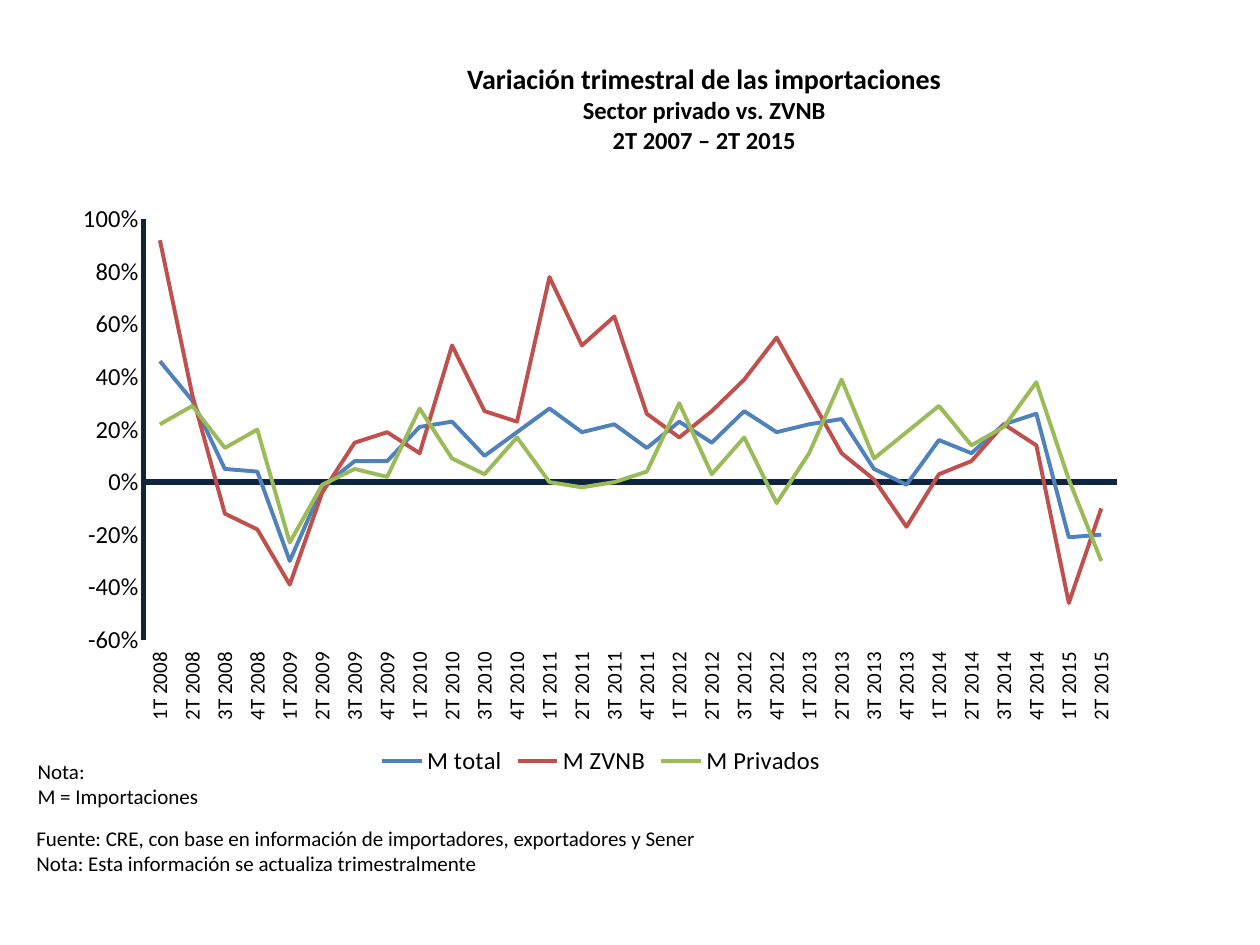
import pptx
import pptx.chart.data
import pptx.dml.color
import pptx.enum.chart
import pptx.enum.text
import pptx.oxml
import pptx.oxml.ns
import pptx.util

INK = pptx.dml.color.RGBColor(0x00, 0x00, 0x00)
NAVY = pptx.dml.color.RGBColor(0x0F, 0x24, 0x3E)
BLUE = pptx.dml.color.RGBColor(0x4F, 0x81, 0xBD)
RED = pptx.dml.color.RGBColor(0xC0, 0x50, 0x4D)
GREEN = pptx.dml.color.RGBColor(0x9B, 0xBB, 0x59)
FACE = "Calibri"
WIDE, HIGH = pptx.util.Inches(10), pptx.util.Inches(7.5)

QUARTERS = [f"{q}T {year}" for year in range(2008, 2016) for q in range(1, 5)][:30]
SERIES = [
    ("M total", BLUE, [
        0.46, 0.31, 0.05, 0.04, -0.3, -0.02, 0.08, 0.08, 0.21, 0.23,
        0.1, 0.19, 0.28, 0.19, 0.22, 0.13, 0.23, 0.15, 0.27, 0.19,
        0.22, 0.24, 0.05, -0.01, 0.16, 0.11, 0.22, 0.26, -0.21, -0.2]),
    ("M ZVNB", RED, [
        0.92, 0.33, -0.12, -0.18, -0.39, -0.04, 0.15, 0.19, 0.11, 0.52,
        0.27, 0.23, 0.78, 0.52, 0.63, 0.26, 0.17, 0.27, 0.39, 0.55,
        0.33, 0.11, 0.01, -0.17, 0.03, 0.08, 0.22, 0.14, -0.46, -0.1]),
    ("M Privados", GREEN, [
        0.22, 0.29, 0.13, 0.2, -0.23, -0.01, 0.05, 0.02, 0.28, 0.09,
        0.03, 0.17, 0, -0.02, 0, 0.04, 0.3, 0.03, 0.17, -0.08,
        0.11, 0.39, 0.09, 0.19, 0.29, 0.14, 0.21, 0.38, 0.01, -0.3]),
]


def share(left, top, width, height):
    """Turn percentages of the slide into a box."""
    return [int(part * side / 100) for part, side in
            zip((left, top, width, height), (WIDE, HIGH, WIDE, HIGH))]


def style(font, size, bold=False):
    """Set the face, size, weight and colour of a font."""
    font.name, font.size, font.bold = FACE, pptx.util.Pt(size), bold
    font.color.rgb = INK


def add_text(slide, box, lines, sizes, align=pptx.enum.text.PP_ALIGN.LEFT, bold=False):
    """Place a block of lines, one paragraph each, in the box."""
    frame = slide.shapes.add_textbox(*box).text_frame
    frame.word_wrap = True
    frame.auto_size = pptx.enum.text.MSO_AUTO_SIZE.SHAPE_TO_FIT_TEXT
    frame.text = "\n".join(lines)
    for para, size in zip(frame.paragraphs, sizes):
        para.alignment = align
        style(para.runs[0].font, size, bold)


def set_axis(axis, size, weight):
    """Give an axis its labels and line, without ticks or grid."""
    axis.has_major_gridlines = False
    axis.major_tick_mark = axis.minor_tick_mark = pptx.enum.chart.XL_TICK_MARK.NONE
    style(axis.tick_labels.font, size)
    axis.format.line.color.rgb = NAVY
    axis.format.line.width = pptx.util.Pt(weight)


def set_plot(chart, left, top, width, height):
    """Fix the inner plot area to percentages of the chart."""
    area = chart._chartSpace.chart.plotArea
    for old in area.findall(pptx.oxml.ns.qn("c:layout")):
        area.remove(old)
    parts = zip("xywh", (left, top, width, height))
    modes = '<c:layoutTarget val="inner"/><c:xMode val="edge"/><c:yMode val="edge"/>'
    sizes = "".join(f'<c:{name} val="{part / 100:.4f}"/>' for name, part in parts)
    area.insert(0, pptx.oxml.parse_xml(
        f'<c:layout {pptx.oxml.ns.nsdecls("c")}><c:manualLayout>'
        f'{modes}{sizes}</c:manualLayout></c:layout>'))


def add_lines(slide, box):
    """Place the line chart of quarterly changes in the box."""
    data = pptx.chart.data.CategoryChartData(number_format="0%")
    data.categories = QUARTERS
    for name, _, values in SERIES:
        data.add_series(name, values)
    chart = slide.shapes.add_chart(pptx.enum.chart.XL_CHART_TYPE.LINE, *box, data).chart
    chart.has_title = False
    style(chart.font, 18)
    chart.plots[0].vary_by_categories = False
    for line, (_, color, _) in zip(chart.plots[0].series, SERIES):
        line.smooth = False
        line.marker.style = pptx.enum.chart.XL_MARKER_STYLE.NONE
        line.format.line.color.rgb = color
        line.format.line.width = pptx.util.Pt(2.25)

    across, up = chart.category_axis, chart.value_axis
    set_axis(across, 12, 3.5)
    across.tick_label_position = pptx.enum.chart.XL_TICK_LABEL_POSITION.LOW
    across._element.txPr.bodyPr.set("rot", "-5400000")
    set_axis(up, 14, 3)
    up.minimum_scale, up.maximum_scale, up.major_unit = -0.6, 1, 0.2
    up.tick_labels.number_format = "0%"
    up.tick_labels.number_format_is_linked = False
    set_plot(chart, 7.6, 4.5, 90.3, 71.5)

    chart.has_legend = True
    chart.legend.position = pptx.enum.chart.XL_LEGEND_POSITION.BOTTOM
    chart.legend.include_in_layout = False
    style(chart.legend.font, 14)


def main():
    """Build the slide and save it."""
    deck = pptx.Presentation()
    deck.slide_width, deck.slide_height = WIDE, HIGH
    slide = deck.slides.add_slide(deck.slide_layouts[6])
    add_text(slide, share(17, 5.87, 77.8, 11.2),
             ["Variación trimestral de las importaciones",
              "Sector privado vs. ZVNB", "2T 2007 – 2T 2015"],
             [16, 14, 14], pptx.enum.text.PP_ALIGN.CENTER, True)
    add_text(slide, share(2, 79.6, 78.2, 6.67),
             ["Nota:", "M = Importaciones"], [12, 12])
    add_lines(slide, share(4.9, 20.4, 85.6, 62.27))
    add_text(slide, share(1.9, 86.67, 78.2, 12.13),
             ["Fuente: CRE, con base en información de importadores, exportadores y Sener",
              "Nota: Esta información se actualiza trimestralmente"], [12, 12])
    deck.save("out.pptx")


if __name__ == "__main__":
    main()
